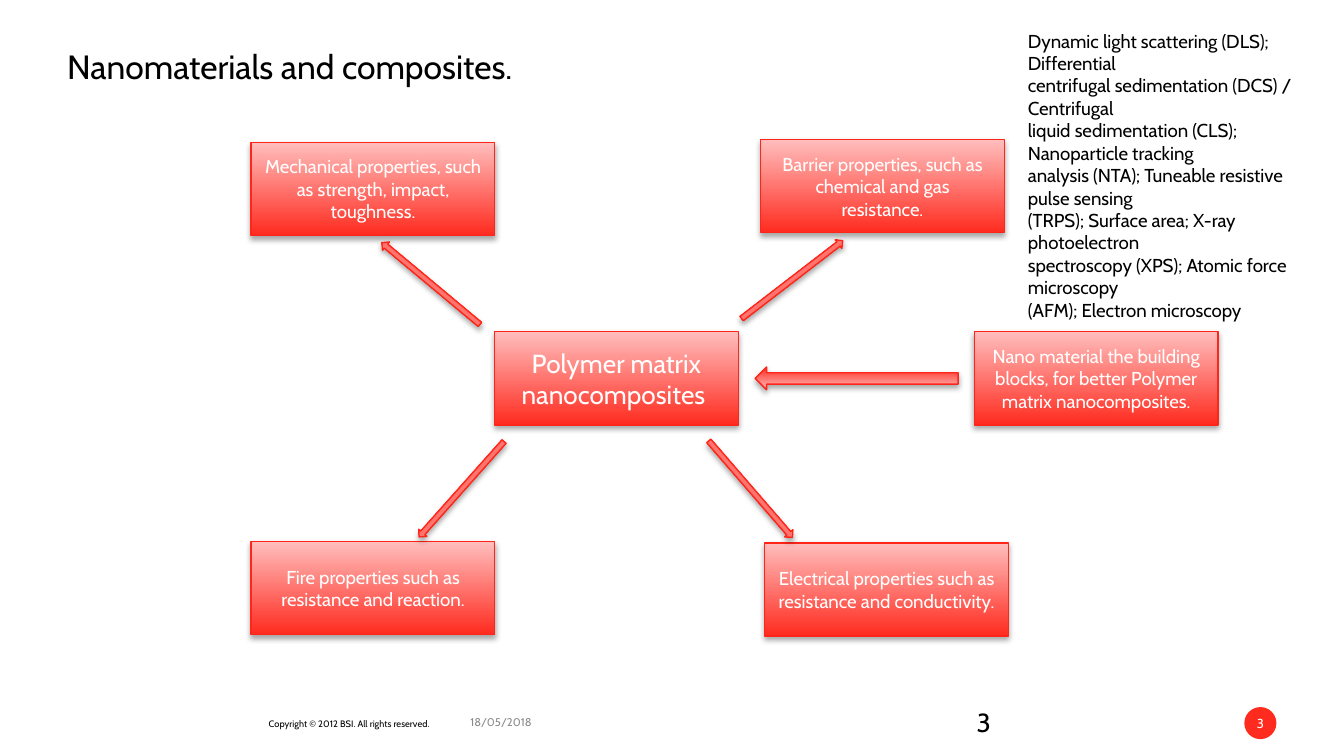
"""Build the slide on nanomaterials and the composite properties they improve."""
from lxml.etree import SubElement
from pptx import Presentation
from pptx.dml.color import RGBColor
from pptx.enum.shapes import MSO_SHAPE
from pptx.enum.text import MSO_ANCHOR, PP_ALIGN
from pptx.oxml.ns import qn
from pptx.util import Pt

RED = RGBColor(0xFF, 0x2B, 0x1F)
PINK = RGBColor(0xFF, 0xBE, 0xBD)
EDGE = RGBColor(0xFF, 0x25, 0x19)
BLACK = RGBColor(0, 0, 0)
GREY = RGBColor(0x8C, 0x8C, 0x8C)
WHITE = RGBColor(0xFF, 0xFF, 0xFF)

FONT = "Cabin"
BOX_SIZE = (130.5, 49.9)
SPOKE_SIZE = (68.4, 5.8)
FEED_SIZE = (108.7, 12.2)
PADDING = (7.2, 3.6)
NO_PADDING = (0, 0)

METHODS = [
    "Dynamic light scattering (DLS); Differential",
    "centrifugal sedimentation (DCS) / Centrifugal",
    "liquid sedimentation (CLS); Nanoparticle tracking",
    "analysis (NTA); Tuneable resistive pulse sensing",
    "(TRPS); Surface area; X-ray photoelectron",
    "spectroscopy (XPS); Atomic force microscopy",
    "(AFM); Electron microscopy",
]

LABELS = [
    (["Copyright © 2012 BSI. All rights reserved."], (144, 384.5, 96.5, 6.5), 5, BLACK, NO_PADDING),
    (["Nanomaterials and composites."], (36, 24.5, 500, 28), 18, BLACK, NO_PADDING),
    (["18/05/2018"], (252, 383, 103, 11.5), 6, GREY, NO_PADDING),
    (["3"], (516.2, 375.1, 167.8, 21.6), 14, BLACK, PADDING),
    (METHODS, (543.6, 12.2, 155.5, 164.9), 10, BLACK, PADDING),
]

BOXES = [
    ("Polymer matrix nanocomposites ", (265, 177.8), 14),
    ("Barrier properties, such as chemical and gas resistance.", (407.5, 74.9), 10),
    ("Mechanical properties, such as strength, impact, toughness.", (134.6, 76.3), 10),
    ("Nano material the building blocks, for better Polymer matrix nanocomposites.", (522, 177.8), 10),
    ("Fire properties such as resistance and reaction.", (134.6, 290.2), 10),
    ("Electrical properties such as resistance and conductivity.", (409.7, 290.9), 10),
]

ARROWS = [
    ((390.2, 146.9), SPOKE_SIZE, 322.4),
    ((196.6, 149), SPOKE_SIZE, 219.8),
    ((213.1, 259.2), SPOKE_SIZE, 131.7),
    ((367.9, 259.2), SPOKE_SIZE, 49.1),
    ((404.6, 196.6), FEED_SIZE, 180),
]


def set_all(target, values):
    for name, value in values.items():
        setattr(target, name, value)


def write(shape, lines, size, color, padding=PADDING, **alignment):
    across, down = map(Pt, padding)
    frame = shape.text_frame
    set_all(frame, {
        "text": "\n".join(lines), "word_wrap": True,
        "margin_left": across, "margin_right": across,
        "margin_top": down, "margin_bottom": down, **alignment,
    })
    for paragraph in frame.paragraphs:
        for run in paragraph.runs:
            set_all(run.font, {"name": FONT, "size": Pt(size)})
            run.font.color.rgb = color


def write_centred(shape, line, size, padding=PADDING):
    write(shape, [line], size, WHITE, padding, vertical_anchor=MSO_ANCHOR.MIDDLE)
    shape.text_frame.paragraphs[0].alignment = PP_ALIGN.CENTER


def add_glossy(slide, preset, place, size):
    shape = slide.shapes.add_shape(preset, *map(Pt, place + size))
    shape.fill.gradient()
    shape.fill.gradient_angle = 90
    for stop, color in zip(shape.fill.gradient_stops, (RED, PINK)):
        stop.color.rgb = color
    shape.line.color.rgb = EDGE
    shape.line.width = Pt(0.75)
    shape.shadow.inherit = False
    effects = shape._element.spPr.find(qn("a:effectLst"))
    shadow = SubElement(effects, qn("a:outerShdw"), blurRad=str(Pt(3.1)),
                        dist=str(Pt(1.8)), dir="5400000", rotWithShape="0")
    tint = SubElement(shadow, qn("a:srgbClr"), val=str(BLACK))
    SubElement(tint, qn("a:alpha"), val="35000")
    return shape


def main():
    deck = Presentation()
    set_all(deck, {"slide_width": Pt(720), "slide_height": Pt(405)})
    slide = deck.slides.add_slide(deck.slide_layouts[6])

    for lines, place, size, color, padding in LABELS:
        write(slide.shapes.add_textbox(*map(Pt, place)), lines, size, color, padding)

    badge = slide.shapes.add_shape(MSO_SHAPE.OVAL, *map(Pt, (666.6, 378.8, 17.2, 17.2)))
    badge.shadow.inherit = False
    badge.fill.solid()
    badge.fill.fore_color.rgb = RED
    badge.line.fill.background()
    write_centred(badge, "3", 7, NO_PADDING)

    for line, place, size in BOXES:
        write_centred(add_glossy(slide, MSO_SHAPE.RECTANGLE, place, BOX_SIZE), line, size)

    for place, size, angle in ARROWS:
        add_glossy(slide, MSO_SHAPE.RIGHT_ARROW, place, size).rotation = angle

    deck.save("out.pptx")


if __name__ == "__main__":
    main()
